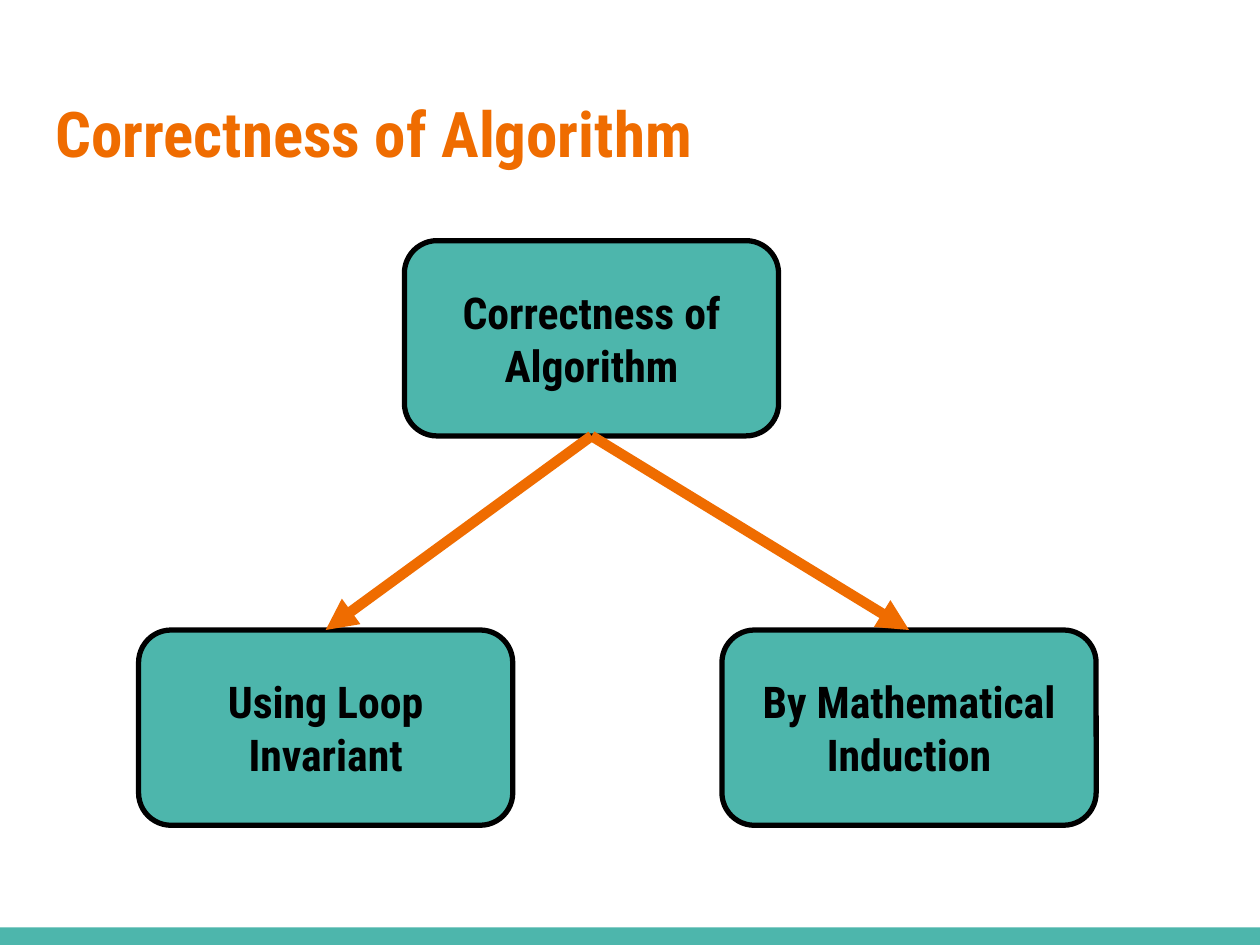
from pptx import Presentation
from pptx.dml.color import RGBColor
from pptx.enum.shapes import MSO_CONNECTOR, MSO_SHAPE
from pptx.enum.text import MSO_ANCHOR, PP_ALIGN
from pptx.oxml.ns import qn
from pptx.util import Inches, Pt
from lxml.etree import SubElement

TEAL = RGBColor(0x4D, 0xB6, 0xAC)
ORANGE = RGBColor(0xEF, 0x6C, 0x00)
BLACK = RGBColor(0, 0, 0)
BOX_WIDTH, BOX_HEIGHT = 2.97, 1.55
ROOT_LEFT, ROOT_TOP = 3.21, 1.91
BRANCH_TOP = 5
BRANCHES = [("Using Loop Invariant", 1.1), ("By Mathematical Induction", 5.73)]


def write_text(shape, text, size, color, alignment, anchor):
    frame = shape.text_frame
    frame_format = {"word_wrap": True, "vertical_anchor": anchor}
    for side in ("left", "top", "right", "bottom"):
        frame_format[f"margin_{side}"] = Inches(0.1)
    for name, value in frame_format.items():
        setattr(frame, name, value)
    paragraph = frame.paragraphs[0]
    paragraph.alignment = alignment
    run = paragraph.add_run()
    run.text = text
    font_format = {"name": "Roboto Condensed", "size": Pt(size), "bold": True}
    for name, value in font_format.items():
        setattr(run.font, name, value)
    run.font.color.rgb = color


def add_filled_shape(kind, left, top, width, height):
    shape = slide.shapes.add_shape(kind, Inches(left), Inches(top), Inches(width), Inches(height))
    shape.shadow.inherit = False
    shape.fill.solid()
    shape.fill.fore_color.rgb = TEAL
    return shape


presentation = Presentation()
presentation.slide_width = Inches(10)
presentation.slide_height = Inches(7.5)
slide = presentation.slides.add_slide(presentation.slide_layouts[6])

footer_bar = add_filled_shape(MSO_SHAPE.RECTANGLE, 0, 7.36, 10, 0.14)
footer_bar.line.fill.background()

title = slide.shapes.add_textbox(Inches(0.34), Inches(0.65), Inches(9.32), Inches(1.03))
write_text(title, "Correctness of Algorithm", 36, ORANGE, PP_ALIGN.LEFT, MSO_ANCHOR.TOP)

boxes = [("Correctness of Algorithm", ROOT_LEFT, ROOT_TOP)]
boxes += [(text, left, BRANCH_TOP) for text, left in BRANCHES]
box_shapes = []
for text, left, top in boxes:
    box = add_filled_shape(MSO_SHAPE.ROUNDED_RECTANGLE, left, top, BOX_WIDTH, BOX_HEIGHT)
    box.line.color.rgb = BLACK
    box.line.width = Pt(3)
    write_text(box, text, 25, BLACK, PP_ALIGN.CENTER, MSO_ANCHOR.MIDDLE)
    box_shapes.append(box)

root, *branch_shapes = box_shapes
for branch in branch_shapes:
    arrow = slide.shapes.add_connector(MSO_CONNECTOR.STRAIGHT, 0, 0, 0, 0)
    arrow.begin_connect(root, 2)
    arrow.end_connect(branch, 0)
    arrow.line.color.rgb = ORANGE
    arrow.line.width = Pt(6)
    SubElement(arrow.line._get_or_add_ln(), qn("a:tailEnd"), type="triangle")
    SubElement(arrow._element.spPr, qn("a:effectLst"))

presentation.save("out.pptx")
